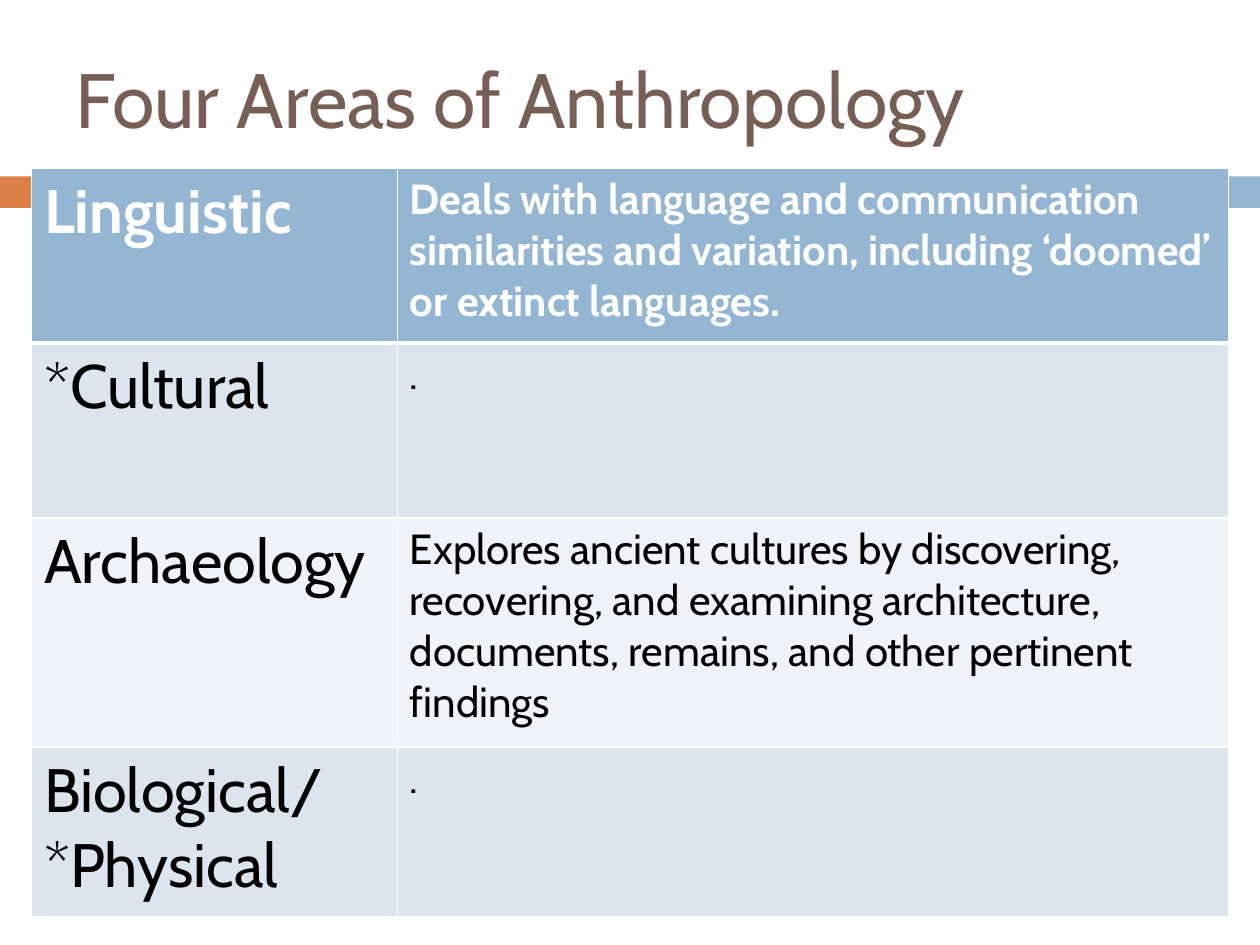
"""Build the slide on the four areas of anthropology."""
from lxml import etree
from pptx import Presentation
from pptx.dml.color import RGBColor
from pptx.enum import shapes, text
from pptx.oxml import ns
from pptx.util import Pt

HUES = {"white": "FFFFFF", "black": "000000", "brown": "775F55",
        "orange": "DD8047", "blue": "94B6D2", "pale": "DCE5EE", "light": "EEF3F7"}


def write(frame, words, size, hue, bold=False):
    for num, line in enumerate(words.split("\n")):
        para = frame.paragraphs[0] if num == 0 else frame.add_paragraph()
        run = para.add_run()
        run.text = line
        run.font.name = "Cabin"
        run.font.size = Pt(size)
        run.font.bold = bold
        run.font.color.rgb = RGBColor.from_string(HUES[hue])


def edge(cell, side, width):
    line = etree.Element(ns.qn(f"a:{side}"), w=str(Pt(width)))
    fill = etree.SubElement(line, ns.qn("a:solidFill"))
    etree.SubElement(fill, ns.qn("a:srgbClr"), val=HUES["white"])
    return line


deck = Presentation()
deck.slide_width, deck.slide_height = Pt(720), Pt(540)
slide = deck.slides.add_slide(deck.slide_layouts[6])

for left, width, hue in [(0, 42, "orange"), (46.8, 673.2, "blue")]:
    bar = slide.shapes.add_shape(shapes.MSO_SHAPE.RECTANGLE,
                                 Pt(left), Pt(100.8), Pt(width), Pt(18))
    bar.shadow.inherit = False
    bar.fill.solid()
    bar.fill.fore_color.rgb = RGBColor.from_string(HUES[hue])
    bar.line.fill.background()

title = slide.shapes.add_textbox(Pt(36), Pt(21.6), Pt(648), Pt(68.4)).text_frame
title.word_wrap = True
title.vertical_anchor = text.MSO_ANCHOR.MIDDLE
write(title, "Four Areas of Anthropology", 44, "brown")

areas = [
    ("Linguistic", "Deals with language and communication similarities and variation, "
     "including ‘doomed’ or extinct languages.", 100, "blue"),
    ("*Cultural", ".", 100, "pale"),
    ("Archaeology", "Explores ancient cultures by discovering, recovering, and examining "
     "architecture, documents, remains, and other pertinent findings", 131, "light"),
    ("Biological/\n*Physical", ".", 97, "pale"),
]
grid = slide.shapes.add_table(len(areas), 2, Pt(18), Pt(96), Pt(684), Pt(428)).table
for col, width in zip(grid.columns, (209, 475)):
    col.width = Pt(width)

for row, (name, about, height, hue) in enumerate(areas):
    grid.rows[row].height = Pt(height)
    head = row == 0
    for col, (words, size) in enumerate([(name, 35), (about, 24)]):
        cell = grid.cell(row, col)
        write(cell.text_frame, words, size, "white" if head else "black", bold=head)
        props = cell._tc.get_or_add_tcPr()
        for side in ("lnL", "lnR", "lnT", "lnB"):
            thick = (head and side == "lnB") or (row == 1 and side == "lnT")
            props.append(edge(cell, side, 3 if thick else 1))
        cell.fill.solid()
        cell.fill.fore_color.rgb = RGBColor.from_string(HUES[hue])

deck.save("out.pptx")
